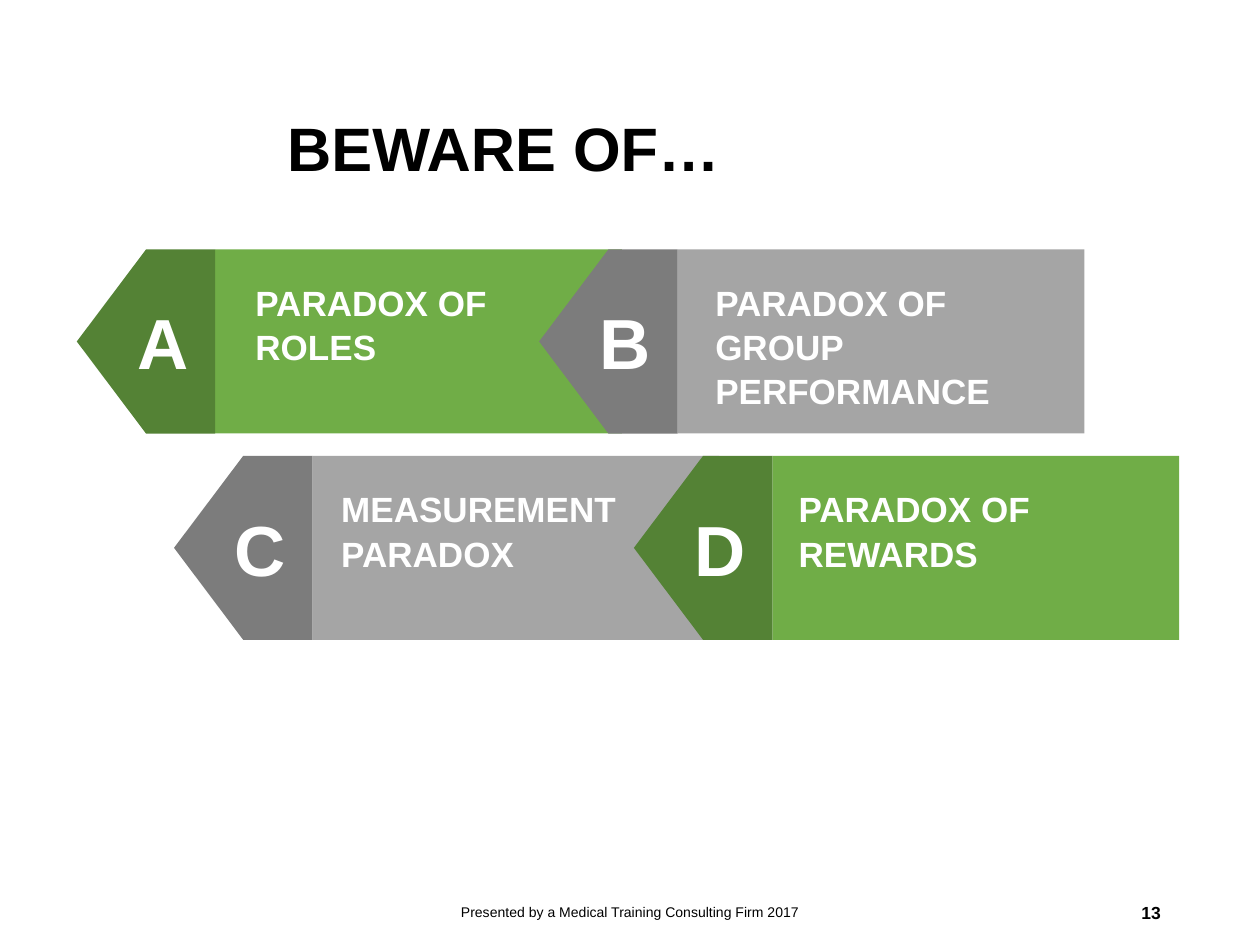
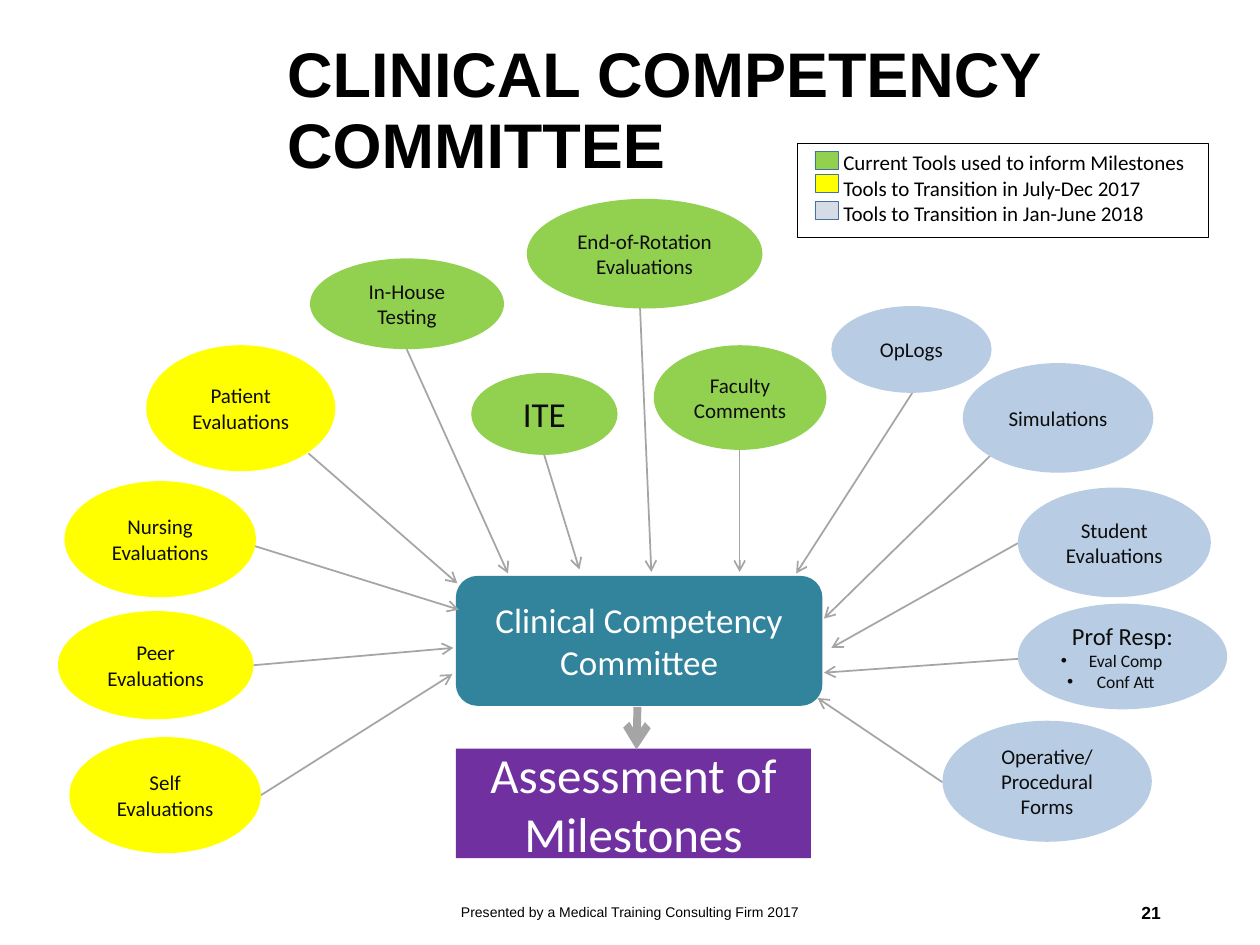
from pptx import Presentation
from pptx.dml.color import RGBColor
from pptx.enum.shapes import MSO_CONNECTOR, MSO_SHAPE
from pptx.enum.text import MSO_ANCHOR, PP_ALIGN
from pptx.oxml.ns import qn
from pptx.util import Cm, Pt
from lxml.etree import SubElement

BLACK = RGBColor(0x00, 0x00, 0x00)
WHITE = RGBColor(0xFF, 0xFF, 0xFF)
INK = RGBColor(0x0D, 0x0D, 0x0D)
GREEN = RGBColor(0x70, 0xAD, 0x47)
FOREST = RGBColor(0x54, 0x82, 0x35)
GRAY = RGBColor(0xA5, 0xA5, 0xA5)
SLATE = RGBColor(0x7C, 0x7C, 0x7C)
LIME = RGBColor(0x92, 0xD0, 0x50)
YELLOW = RGBColor(0xFF, 0xFF, 0x00)
BLUE = RGBColor(0xB8, 0xCC, 0xE4)
PALE = RGBColor(0xD6, 0xDC, 0xE5)
NAVY = RGBColor(0x43, 0x73, 0x9E)
TEAL = RGBColor(0x31, 0x84, 0x9B)
PURPLE = RGBColor(0x70, 0x30, 0xA0)


def draw(slide, kind, box, fill=None, edge=None, width=0.5):
    sizes = [Cm(size) for size in box]
    if kind is None:
        shape = slide.shapes.add_textbox(*sizes)
    else:
        shape = slide.shapes.add_shape(kind, *sizes)
        shape.shadow.inherit = False
        shape.fill.solid()
        shape.fill.fore_color.rgb = fill
        if edge is None:
            shape.line.fill.background()
        else:
            shape.line.color.rgb = edge
            shape.line.width = Pt(width)
    shape.text_frame.word_wrap = True
    return shape


def write(shape, lines, size, color, face="Arial", bold=False,
          align=PP_ALIGN.CENTER, anchor=MSO_ANCHOR.MIDDLE, space=None):
    frame = shape.text_frame
    frame.vertical_anchor = anchor
    for index, line in enumerate(lines):
        para = frame.paragraphs[0] if index == 0 else frame.add_paragraph()
        para.alignment = align
        if space:
            para.line_spacing = space
        for part, text in enumerate(line.split("\n")):
            if part:
                para.add_line_break()
            run = para.add_run()
            run.text = text
            run.font.name = face
            run.font.size = Pt(size)
            run.font.bold = bold
            run.font.color.rgb = color


deck = Presentation()
deck.slide_width = Cm(25.4)
deck.slide_height = Cm(19.05)

pages = []
for title, size, top, number in [
    ("BEWARE OF…", 35, 2.21, "13"),
    ("CLINICAL COMPETENCY\nCOMMITTEE", 36, 0.69, "21"),
]:
    page = deck.slides.add_slide(deck.slide_layouts[6])
    head = draw(page, None, (5.54, top, 18.14, 4.37 - top))
    write(head, [title], size, BLACK, bold=True, align=PP_ALIGN.LEFT,
          anchor=MSO_ANCHOR.TOP, space=0.94)
    foot = draw(page, None, (8.41, 17.88, 8.59, 1.02))
    write(foot, ["Presented by a Medical Training Consulting Firm 2017"], 8, BLACK)
    count = draw(page, None, (17.93, 17.88, 5.72, 1.02))
    write(count, [number], 10, BLACK, bold=True, align=PP_ALIGN.RIGHT)
    pages.append(page)
beware, board = pages

TALL, TIP, BAR = 3.71, 2.79, 8.2
for letter, label, left, top, inset, dark, light in [
    ("A", "PARADOX OF ROLES", 1.55, 5.03, 3.35, FOREST, GREEN),
    ("B", "PARADOX OF GROUP PERFORMANCE", 10.87, 5.03, 3.3, SLATE, GRAY),
    ("C", "MEASUREMENT PARADOX", 3.51, 9.19, 3.12, SLATE, GRAY),
    ("D", "PARADOX OF REWARDS", 12.78, 9.19, 3.07, FOREST, GREEN),
]:
    draw(beware, MSO_SHAPE.RECTANGLE, (left + TIP, top, BAR, TALL), light)
    tip = draw(beware, MSO_SHAPE.PENTAGON, (left, top, TIP, TALL), dark)
    tip._element.spPr.find(qn("a:xfrm")).set("flipH", "1")
    write(tip, [letter], 40.5, WHITE, bold=True)
    note = draw(beware, None, (left + inset, top + 0.48, 7, 2.8))
    write(note, [label], 20, WHITE, bold=True, align=PP_ALIGN.LEFT,
          anchor=MSO_ANCHOR.TOP, space=1.05)

hub = draw(board, MSO_SHAPE.ROUNDED_RECTANGLE, (9.19, 11.61, 7.39, 2.62), TEAL)
write(hub, ["Clinical Competency Committee"], 20, WHITE, "Calibri")
goal = draw(board, MSO_SHAPE.RECTANGLE, (9.19, 15.09, 7.16, 2.21), PURPLE)
write(goal, ["Assessment of Milestones"], 28, WHITE, "Calibri")

for *ends, width in [
    (12.9, 6.15, 13.13, 11.53, 1),
    (5.11, 13.41, 9.14, 13.06, 1),
    (6.22, 9.14, 9.22, 11.76, 1),
    (5.11, 11, 9.25, 12.29, 1),
    (18.39, 7.92, 16.05, 11.56, 1),
    (5.26, 16.03, 9.12, 13.59, 1),
    (20.52, 10.95, 16.76, 13.06, 1),
    (19, 15.77, 16.48, 14.07, 1),
    (20.55, 13.28, 16.61, 13.56, 1),
    (8.2, 7.04, 10.24, 11.56, 1),
    (10.97, 9.17, 11.68, 11.48, 1),
    (14.91, 8.94, 14.91, 11.53, 1),
    (19.96, 9.19, 16.61, 12.47, 1),
    (12.85, 14.25, 12.83, 15.11, 4.5),
]:
    arrow = board.shapes.add_connector(
        MSO_CONNECTOR.STRAIGHT, *[Cm(end) for end in ends])
    arrow.line.color.rgb = GRAY
    arrow.line.width = Pt(width)
    SubElement(arrow.line._get_or_add_ln(), qn("a:tailEnd"), type="arrow")
    SubElement(arrow._element.spPr, qn("a:effectLst"))

for lines, size, fill, box in [
    (["End-of-Rotation Evaluations"], 12, LIME, (10.62, 4.01, 4.75, 2.21)),
    (["In-House", "Testing"], 12, LIME, (6.25, 5.21, 3.91, 1.83)),
    (["ITE"], 20, LIME, (9.5, 7.52, 2.95, 1.65)),
    (["Faculty Comments"], 12, LIME, (13.18, 6.96, 3.48, 2.11)),
    (["Patient Evaluations"], 12, YELLOW, (2.95, 6.96, 3.81, 2.54)),
    (["Nursing Evaluations"], 12, YELLOW, (1.3, 9.7, 3.86, 2.34)),
    (["Peer Evaluations"], 12, YELLOW, (1.17, 12.32, 3.94, 2.18)),
    (["Self", "Evaluations"], 12, YELLOW, (1.4, 14.86, 3.86, 2.34)),
    (["OpLogs"], 12, BLUE, (16.76, 6.17, 3.23, 1.75)),
    (["Simulations"], 12, BLUE, (19.41, 7.32, 3.84, 2.21)),
    (["Student Evaluations"], 12, BLUE, (20.52, 9.83, 3.89, 2.21)),
    (["Prof Resp:", "Eval Comp", "Conf Att"], 10, BLUE, (20.52, 12.17, 4.22, 2.13)),
    (["Operative/", "Procedural", "Forms"], 12, BLUE, (19, 14.53, 4.22, 2.44)),
]:
    tool = draw(board, MSO_SHAPE.OVAL, box, fill)
    write(tool, lines, size, INK, "Calibri")
    if lines[0] == "Prof Resp:":
        first, *items = tool.text_frame.paragraphs
        first.runs[0].font.size = Pt(14)
        for item in items:
            props = item._p.get_or_add_pPr()
            SubElement(props, qn("a:buFont"), typeface="Arial")
            SubElement(props, qn("a:buChar"), char="•")

key = draw(board, MSO_SHAPE.RECTANGLE, (16.08, 2.9, 8.28, 1.88), WHITE, BLACK)
key.text_frame.margin_left = Cm(0.92)
key.text_frame.margin_right = Cm(0)
write(key, [
    "Current Tools used to inform Milestones",
    "Tools to Transition in July-Dec 2017",
    "Tools to Transition in Jan-June 2018",
], 12, BLACK, "Calibri", align=PP_ALIGN.LEFT, anchor=MSO_ANCHOR.TOP)
for top, fill in [(3.05, LIME), (3.51, YELLOW), (4.06, PALE)]:
    draw(board, MSO_SHAPE.RECTANGLE, (16.43, top, 0.46, 0.36), fill, NAVY, 0.25)

deck.save("out.pptx")
